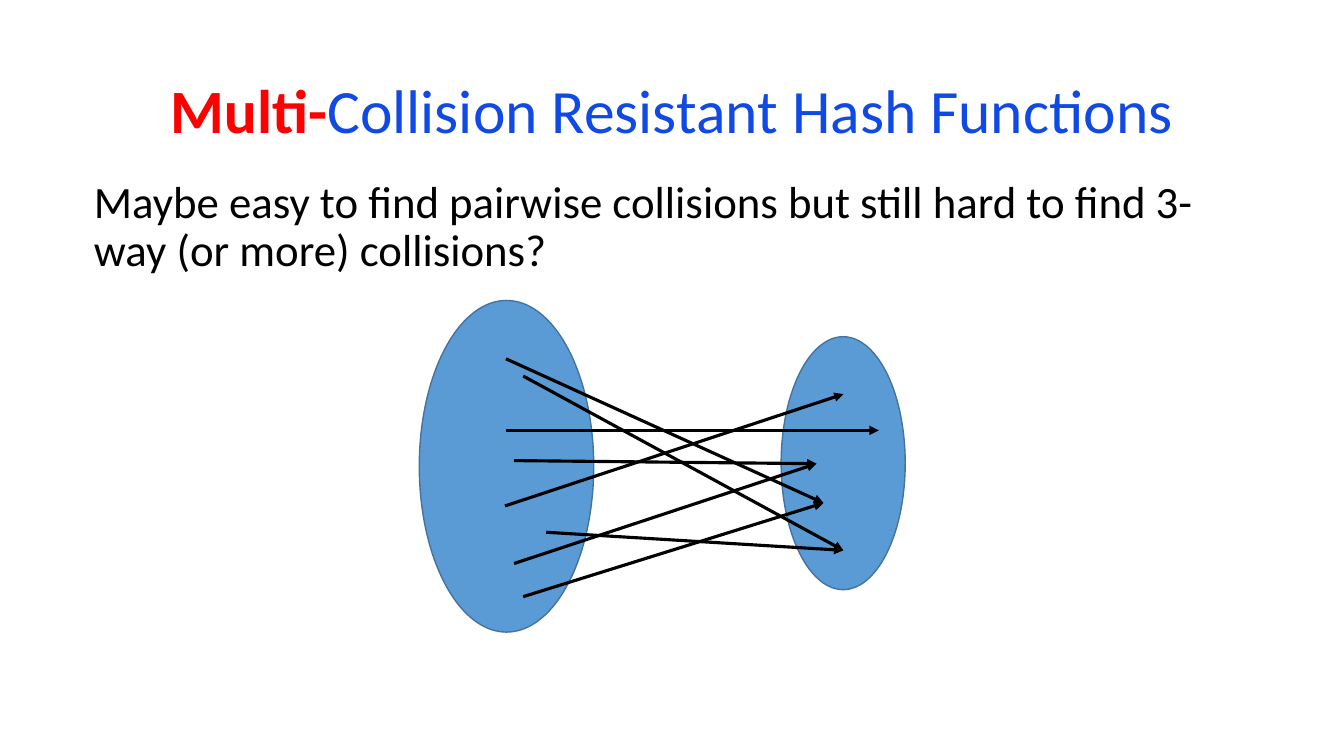
from lxml import etree
from pptx import Presentation
from pptx.dml.color import RGBColor
from pptx.enum.shapes import MSO_CONNECTOR, MSO_SHAPE
from pptx.enum.text import MSO_ANCHOR, MSO_AUTO_SIZE, PP_ALIGN
from pptx.oxml.ns import qn
from pptx.util import Pt

STRAIGHT, OVAL = MSO_CONNECTOR.STRAIGHT, MSO_SHAPE.OVAL
TOP, MIDDLE = MSO_ANCHOR.TOP, MSO_ANCHOR.MIDDLE
LEFT, CENTER = PP_ALIGN.LEFT, PP_ALIGN.CENTER
NO_FIT = MSO_AUTO_SIZE.NONE

COLORS = {"red": "FF0000", "blue": "1149E5", "black": "000000",
          "set": "5B9BD5", "outline": "43739E"}
OUTPUTS = {"first": (602.6, 281.5), "second": (627.8, 307.4),
           "third": (583.2, 331.2), "fourth": (588.2, 359.3),
           "fifth": (602.4, 393.1)}
MAPPING = [((361.4, 256.3), "fourth"), ((361.4, 307.4), "second"),
           ((360.7, 361.4), "first"), ((373.7, 268.6), "fifth"),
           ((367.2, 402.5), "third"), ((367.2, 329), "third"),
           ((373.7, 426.2), "fourth"), ((390.2, 380.2), "fifth")]


class Deck:
    """Holds the style and the current slide, and draws its elements."""

    font = "Calibri"

    def __init__(self, prs):
        self.s = prs.slides.add_slide(prs.slide_layouts[5])

    def color(self, name):
        return RGBColor.from_string(COLORS[name])

    def fill_text(self, sp, runs, size, anchor, align):
        tf = sp.text_frame
        frame = {"word_wrap": True, "auto_size": NO_FIT, "vertical_anchor": anchor}
        for key, value in frame.items():
            setattr(tf, key, value)
        p = tf.paragraphs[0]
        for key, value in {"alignment": align, "line_spacing": 0.9}.items():
            setattr(p, key, value)
        for text, color, bold in runs:
            r = p.add_run()
            r.text = text
            style = {"name": self.font, "size": Pt(size), "bold": bold}
            for key, value in style.items():
                setattr(r.font, key, value)
            r.font.color.rgb = self.color(color)

    def title(self, box, runs):
        sp = self.s.shapes.title
        for key, value in zip(("left", "top", "width", "height"), box):
            setattr(sp, key, Pt(value))
        self.fill_text(sp, runs, 44, MIDDLE, CENTER)

    def text(self, box, runs):
        sp = self.s.shapes.add_textbox(*map(Pt, box))
        self.fill_text(sp, runs, 32, TOP, LEFT)

    def ellipse(self, box):
        sp = self.s.shapes.add_shape(OVAL, *map(Pt, box))
        sp.shadow.inherit = False
        sp.fill.solid()
        sp.fill.fore_color.rgb = self.color("set")
        sp.line.color.rgb = self.color("outline")
        sp.line.width = Pt(1)

    def arrow(self, start, end):
        sp = self.s.shapes.add_connector(STRAIGHT, *map(Pt, start + end))
        sp.line.color.rgb = self.color("black")
        sp.line.width = Pt(2.25)
        sp_pr = sp._element.spPr
        etree.SubElement(sp_pr.find(qn("a:ln")), qn("a:tailEnd"), type="triangle")
        etree.SubElement(sp_pr, qn("a:effectLst"))


def main():
    prs = Presentation()
    prs.slide_width, prs.slide_height = Pt(960), Pt(540)
    deck = Deck(prs)
    deck.title((66, 28.8, 828, 104.4),
               [("Multi-", "red", True),
                ("Collision Resistant Hash Functions", "blue", False)])
    deck.text((60, 124.6, 828, 342.7),
              [("Maybe easy to find pairwise collisions but still hard to find "
                "3-way (or more) collisions?", "black", False)])
    for box in ((299.5, 214.6, 124.6, 236.9), (558, 240.5, 88.6, 180.7)):
        deck.ellipse(box)
    for start, output in MAPPING:
        deck.arrow(start, OUTPUTS[output])
    prs.save("out.pptx")


if __name__ == "__main__":
    main()
